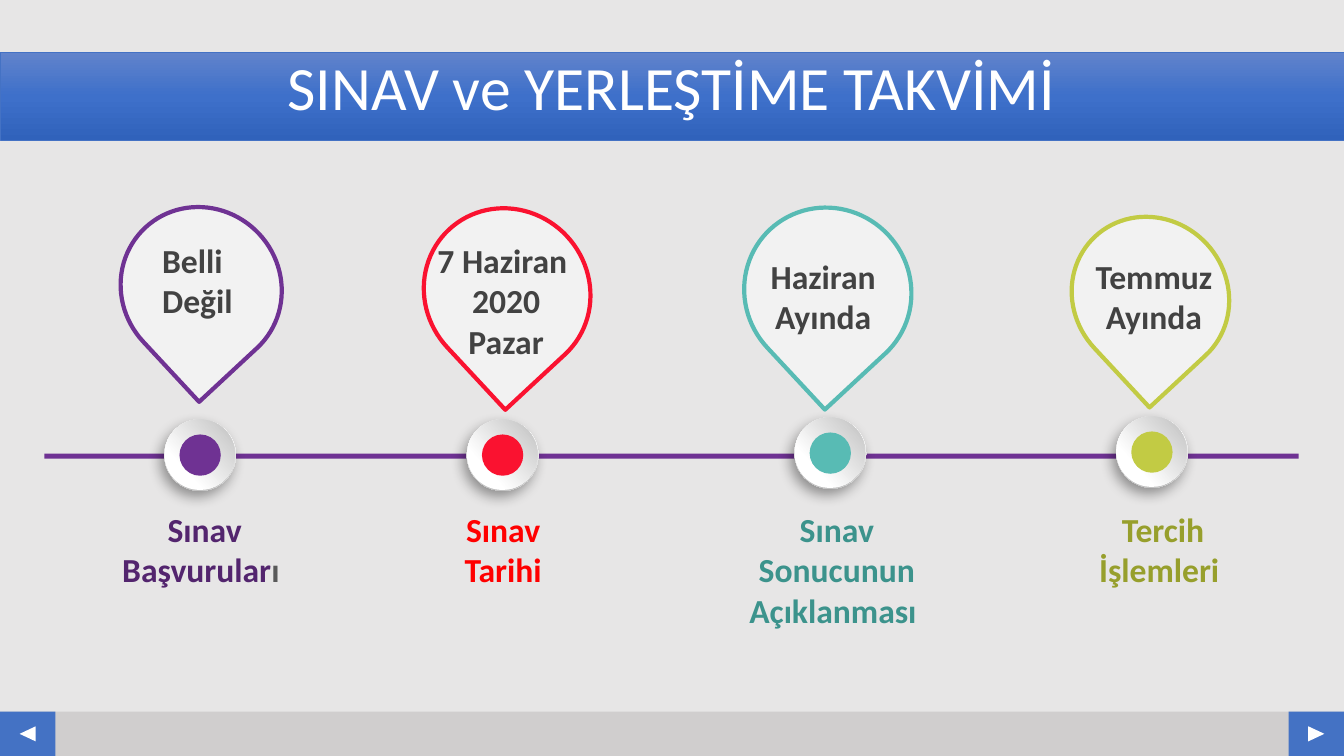
"""Build the exam and placement calendar slide."""
import pptx
import pptx.dml.color
import pptx.enum.shapes
import pptx.enum.text
import pptx.oxml
import pptx.oxml.ns
import pptx.util
from pptx.util import Inches

KIND = pptx.enum.shapes.MSO_SHAPE
ALIGN = pptx.enum.text.PP_ALIGN
ANCHOR = pptx.enum.text.MSO_ANCHOR
SPACE = pptx.oxml.ns.nsdecls("a")
HEX = {
    "back": "E7E6E6", "foot": "D0CECE", "blue": "4472C4", "white": "FFFFFF",
    "pin": "F2F2F2", "ink": "424242", "grey": "595959",
    "violet": "6F3293", "red": "FA1230", "teal": "58BBB4", "lime": "C2CB44",
    "plum": "53256E", "scarlet": "FF0000", "pine": "3C938C", "olive": "979F2C",
}
BAND = [(0, "6183CB"), (50, "3E70CA"), (100, "3062BB")]
RIM = [(17, "FFFFFF"), (88, "B8B8B8")]
DISC = [(29, "FFFFFF"), (98, "BFBFBF")]

STEPS = [
    {"color": "violet", "ring": (1.63, 4.16), "pin": (1.21, 2.04, 1.57, 1.63),
     "date": ["Belli", "Değil"], "spot": (1.51, 2.33, 0.91, 0.91),
     "align": ALIGN.LEFT, "label": [("Sınav Başvurular", "plum"), ("ı ", "grey")],
     "area": (1.08, 5, 1.9, 0.91)},
    {"color": "red", "ring": (4.63, 4.16), "pin": (4.22, 2.05, 1.62, 1.69),
     "date": ["7 Haziran ", "2020", "Pazar"], "spot": (4.23, 2.33, 1.58, 1.31),
     "align": ALIGN.CENTER, "label": [("Sınav Tarihi", "scarlet")],
     "area": (4.15, 5, 1.68, 0.91)},
    {"color": "teal", "ring": (7.88, 4.14), "pin": (7.39, 2.05, 1.64, 1.68),
     "date": [" Haziran ", "Ayında"], "spot": (7.46, 2.49, 1.41, 1.31),
     "align": ALIGN.CENTER, "label": [("Sınav Sonucunun Açıklanması ", "pine")],
     "area": (7.22, 5, 2.16, 1.31)},
    {"color": "lime", "ring": (11.07, 4.13), "pin": (10.65, 2.13, 1.52, 1.61),
     "date": ["Temmuz", "Ayında"], "spot": (10.76, 2.49, 1.37, 0.91),
     "align": ALIGN.CENTER, "label": [("Tercih İşlemleri ", "olive")],
     "area": (10.76, 5, 1.55, 0.91)},
]


def tint(name):
    """Return the named colour."""
    return pptx.dml.color.RGBColor.from_string(HEX[name])


def add_form(slide, kind, box, fill="white", line=None, width=1, turn=0):
    """Add a flat preset shape."""
    form = slide.shapes.add_shape(kind, *map(Inches, box))
    form.shadow.inherit = False
    form.rotation = turn
    form.fill.solid()
    form.fill.fore_color.rgb = tint(fill)
    if line:
        form.line.color.rgb = tint(line)
        form.line.width = pptx.util.Pt(width)
    else:
        form.line.fill.background()
    return form


def blend(form, stops, angle):
    """Replace the solid fill with a linear gradient."""
    marks = "".join(f'<a:gs pos="{pos * 1000}"><a:srgbClr val="{color}"/></a:gs>'
                    for pos, color in stops)
    grad = pptx.oxml.parse_xml(
        f'<a:gradFill {SPACE} rotWithShape="1"><a:gsLst>{marks}</a:gsLst>'
        f'<a:lin ang="{angle * 60000}" scaled="0"/></a:gradFill>')
    props = form._element.spPr
    props.replace(props.find(pptx.oxml.ns.qn("a:solidFill")), grad)


def cast(form):
    """Give the shape a soft outer shadow."""
    glow = form._element.spPr.find(pptx.oxml.ns.qn("a:effectLst"))
    glow.append(pptx.oxml.parse_xml(
        f'<a:outerShdw {SPACE} blurRad="{pptx.util.Pt(10)}" dist="{pptx.util.Pt(5)}" '
        f'dir="{123 * 60000}" algn="ctr" rotWithShape="0">'
        '<a:srgbClr val="000000"><a:alpha val="39000"/></a:srgbClr></a:outerShdw>'))


def style(run, size, color, bold=True):
    """Format one run."""
    run.font.name = "Calibri"
    run.font.size = pptx.util.Pt(size)
    run.font.bold = bold
    run.font.color.rgb = tint(color)


def add_text(slide, box, lines, align, wrap):
    """Add a text box whose lines are lists of text and colour."""
    frame = slide.shapes.add_textbox(*map(Inches, box)).text_frame
    frame.word_wrap = wrap
    for index, parts in enumerate(lines):
        para = frame.add_paragraph() if index else frame.paragraphs[0]
        para.alignment = align
        for text, color in parts:
            run = para.add_run()
            run.text = text
            style(run, 24, color)


def add_title(slide):
    """Add the title band."""
    band = add_form(slide, KIND.RECTANGLE, (0, 0.52, 13.33, 0.87), "blue", "blue", 0.5)
    blend(band, BAND, 90)
    frame = band.text_frame
    frame.vertical_anchor = ANCHOR.TOP
    frame.text = "SINAV ve YERLEŞTİME TAKVİMİ"
    para = frame.paragraphs[0]
    para.alignment = ALIGN.CENTER
    para.line_spacing = 0.9
    style(para.runs[0], 44, "white", False)


def add_foot(slide):
    """Add the bottom bar with its two arrow buttons."""
    add_form(slide, KIND.RECTANGLE, (0, 7.06, 13.33, 0.44), "foot")
    for left, turn in ((0, 270), (12.78, 90)):
        add_form(slide, KIND.RECTANGLE, (left, 7.06, 0.55, 0.44), "blue")
        add_form(slide, KIND.ISOSCELES_TRIANGLE, (left + 0.2, 7.2, 0.15, 0.16), turn=turn)


def add_step(slide, step):
    """Add one stop of the timeline: ring, pin, date and label."""
    left, top = step["ring"]
    rim = add_form(slide, KIND.OVAL, (left, top, 0.71, 0.71), turn=62.3)
    blend(rim, RIM, 45)
    cast(rim)
    disc = add_form(slide, KIND.OVAL, (left, top, 0.7, 0.7), turn=273)
    blend(disc, DISC, 45)
    add_form(slide, KIND.OVAL, (left + 0.15, top + 0.15, 0.41, 0.41), step["color"])
    add_form(slide, KIND.TEAR, step["pin"], "pin", step["color"], 3, 137.1)
    dates = [[(text, "ink")] for text in step["date"]]
    add_text(slide, step["spot"], dates, step["align"], False)
    add_text(slide, step["area"], [step["label"]], ALIGN.CENTER, True)


def main():
    """Build and save the slide."""
    deck = pptx.Presentation()
    deck.slide_width, deck.slide_height = Inches(13.33), Inches(7.5)
    slide = deck.slides.add_slide(deck.slide_layouts[6])
    slide.background.fill.solid()
    slide.background.fill.fore_color.rgb = tint("back")
    add_foot(slide)
    add_title(slide)
    add_form(slide, KIND.RECTANGLE, (0.44, 4.5, 12.44, 0.05), "violet")
    for step in STEPS:
        add_step(slide, step)
    deck.save("out.pptx")


if __name__ == "__main__":
    main()
